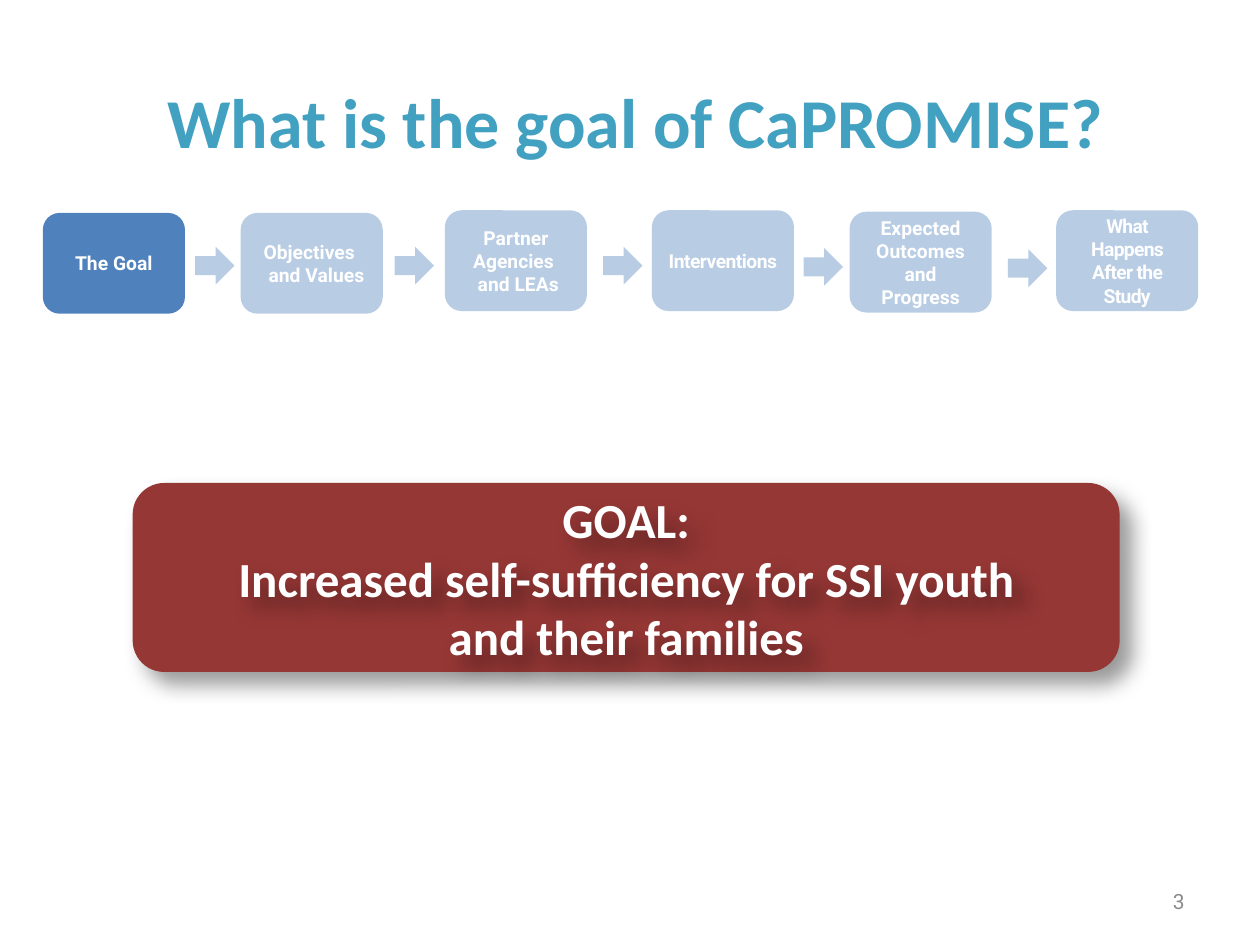
from dataclasses import dataclass

from lxml import etree
from pptx import Presentation
from pptx.dml.color import RGBColor
from pptx.enum.shapes import MSO_SHAPE
from pptx.enum.text import MSO_ANCHOR, PP_ALIGN
from pptx.oxml.ns import qn
from pptx.util import Pt

ROUNDED, ARROW = MSO_SHAPE.ROUNDED_RECTANGLE, MSO_SHAPE.RIGHT_ARROW
TOP, MIDDLE = MSO_ANCHOR.TOP, MSO_ANCHOR.MIDDLE
CENTER, RIGHT = PP_ALIGN.CENTER, PP_ALIGN.RIGHT


@dataclass(frozen=True)
class Theme:
    title: str = "42A1C0"
    step: str = "4F81BD"
    goal: str = "953735"
    light: str = "FFFFFF"
    number: str = "8C8C8C"
    shadow: str = "000000"
    faded: int = 40
    heading_font: str = "Calibri"
    label_font: str = "Roboto"
    title_size: float = 40
    goal_size: float = 28
    number_size: float = 12
    step_size: float = 11


@dataclass(frozen=True)
class Box:
    left: float
    top: float
    width: float
    height: float

    def lengths(self) -> tuple:
        return tuple(Pt(v) for v in (self.left, self.top, self.width, self.height))


@dataclass(frozen=True)
class Step:
    label: str
    left: float
    top: float
    current: bool = False
    spacing: float = 0
    inset: float = 7.2


THEME = Theme()
STEP_WIDTH, STEP_HEIGHT = 81.2, 57.6
ARROW_WIDTH, ARROW_HEIGHT = 22.5, 21.6

# "\v" breaks a line, "\n" starts a paragraph
STEPS = [
    Step("The Goal", 24.5, 121.7, current=True),
    Step("Objectives \v  and Values", 137.5, 121.7),
    Step("Partner Agencies \v and LEAs", 254.2, 120.2),
    Step("Interventions", 372.5, 120.2, spacing=-0.3, inset=3.6),
    Step("Expected Outcomes\nand Progress", 485.5, 121),
    Step("What Happens After the Study", 603.5, 120.2, spacing=-0.4),
]
ARROWS = [(111.5, 141), (225.5, 141), (344.7, 141), (459.2, 141.7), (576, 142.5)]


def write(shape, text: str, size: float, color: str, font: str, bold: bool = True,
          align=CENTER, anchor=MIDDLE, spacing: float = 0, inset: float = 7.2) -> None:
    frame = shape.text_frame
    frame.text = text
    frame_format = {"word_wrap": True, "vertical_anchor": anchor,
                    "margin_left": Pt(inset), "margin_right": Pt(inset),
                    "margin_top": Pt(3.6), "margin_bottom": Pt(3.6)}
    for name, value in frame_format.items():
        setattr(frame, name, value)
    run_format = {"size": Pt(size), "bold": bold, "name": font}
    for paragraph in frame.paragraphs:
        paragraph.alignment = align
        for run in paragraph.runs:
            for name, value in run_format.items():
                setattr(run.font, name, value)
            run.font.color.rgb = RGBColor.from_string(color)
            if spacing:
                run.font._element.set("spc", str(round(spacing * 100)))


def add_solid(slide, preset, box: Box, color: str, opacity: int = 100):
    shape = slide.shapes.add_shape(preset, *box.lengths())
    shape.shadow.inherit = False
    shape.fill.solid()
    shape.fill.fore_color.rgb = RGBColor.from_string(color)
    shape.line.fill.background()
    if opacity < 100:
        rgb = shape._element.spPr.find(qn("a:solidFill")).find(qn("a:srgbClr"))
        etree.SubElement(rgb, qn("a:alpha"), val=str(opacity * 1000))
    return shape


def cast_shadow(shape) -> None:
    shape.shadow.inherit = False
    effects = shape._element.spPr.find(qn("a:effectLst"))
    outer = etree.SubElement(effects, qn("a:outerShdw"), blurRad=str(Pt(12)),
                             dist=str(Pt(9)), dir=str(45 * 60000),
                             algn="tl", rotWithShape="0")
    rgb = etree.SubElement(outer, qn("a:srgbClr"), val=THEME.shadow)
    etree.SubElement(rgb, qn("a:alpha"), val=str(THEME.faded * 1000))


def add_step(slide, step: Step) -> None:
    box = Box(step.left, step.top, STEP_WIDTH, STEP_HEIGHT)
    shape = add_solid(slide, ROUNDED, box, THEME.step,
                      100 if step.current else THEME.faded)
    write(shape, step.label, THEME.step_size, THEME.light, THEME.label_font,
          spacing=step.spacing, inset=step.inset)


def main() -> None:
    deck = Presentation()
    deck.slide_width, deck.slide_height = Pt(720), Pt(540)
    slide = deck.slides.add_slide(deck.slide_layouts[5])

    # Title
    heading = slide.shapes.title
    heading.left, heading.top, heading.width, heading.height = Box(30, 24, 666, 90).lengths()
    write(heading, "What is the goal of CaPROMISE?", THEME.title_size,
          THEME.title, THEME.heading_font)

    # Slide number
    number = slide.shapes.add_textbox(*Box(660, 500.5, 24, 28.8).lengths())
    write(number, "3", THEME.number_size, THEME.number, THEME.label_font,
          bold=False, align=RIGHT)

    # Goal panel and its statement
    cast_shadow(add_solid(slide, ROUNDED, Box(75.8, 276, 564, 108), THEME.goal))
    statement = slide.shapes.add_textbox(*Box(87.8, 276, 540, 108.7).lengths())
    write(statement, "GOAL:\nIncreased self-sufficiency for SSI youth\nand their families",
          THEME.goal_size, THEME.light, THEME.heading_font, anchor=TOP)
    cast_shadow(statement)

    # Progress trail
    for step in STEPS:
        add_step(slide, step)
    for left, top in ARROWS:
        add_solid(slide, ARROW, Box(left, top, ARROW_WIDTH, ARROW_HEIGHT),
                  THEME.step, THEME.faded)

    deck.save("out.pptx")


if __name__ == "__main__":
    main()
